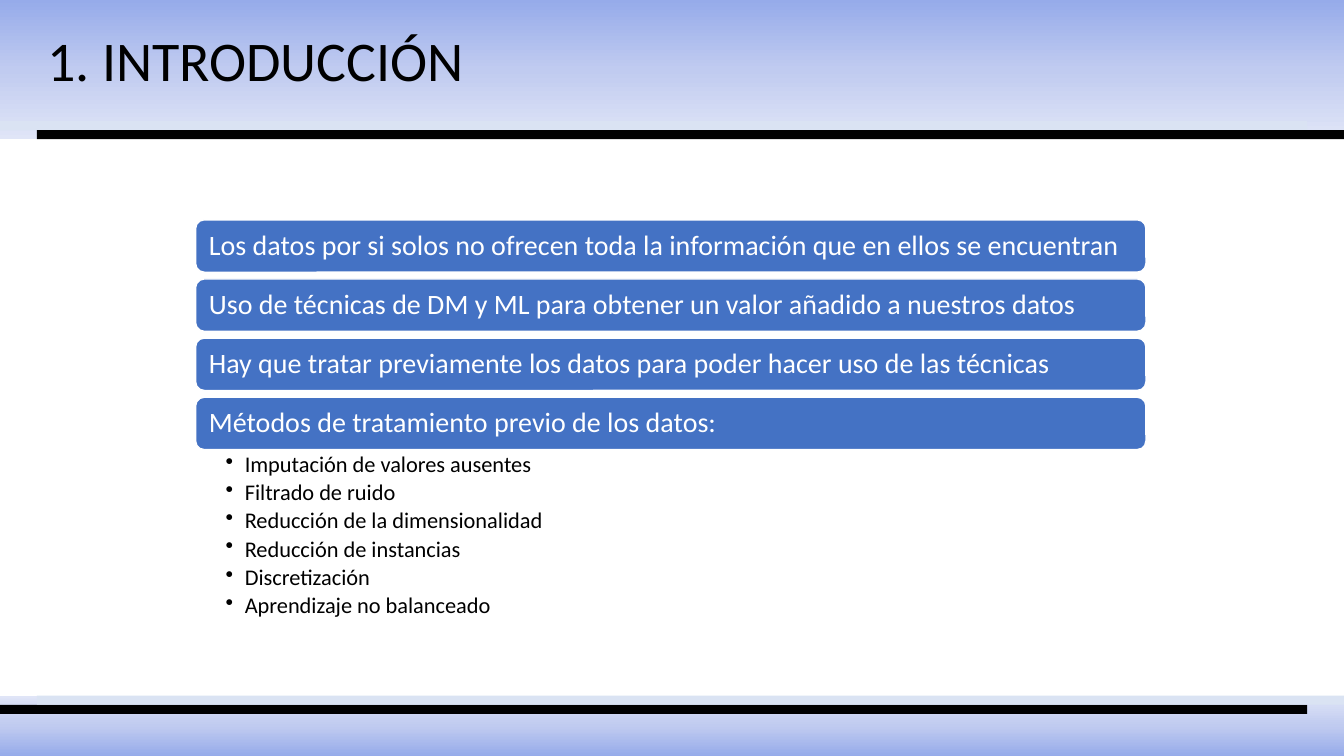
import copy

import pptx
import pptx.dml.color
import pptx.enum.shapes
import pptx.enum.text
import pptx.oxml.ns
import pptx.util
from lxml import etree

Cm = pptx.util.Cm
Pt = pptx.util.Pt
RGBColor = pptx.dml.color.RGBColor
SHAPES = pptx.enum.shapes.MSO_SHAPE
qn = pptx.oxml.ns.qn

BLACK = RGBColor(0x00, 0x00, 0x00)
WHITE = RGBColor(0xFF, 0xFF, 0xFF)
BLUE = RGBColor(0x44, 0x72, 0xC4)
PALE_BLUE = RGBColor(0xDA, 0xE3, 0xF3)
BAND_COLORS = [
    RGBColor(0x96, 0xAB, 0xEA),
    RGBColor(0xC0, 0xCB, 0xF0),
    RGBColor(0xE0, 0xE5, 0xF7),
]

FONT = "Calibri"
SLIDE_WIDTH, SLIDE_HEIGHT = Cm(33.87), Cm(19.05)
STRIPE_WIDTH, STRIPE_HEIGHT = Cm(32.94), Cm(0.23)
STRIPE_INDENT = SLIDE_WIDTH - STRIPE_WIDTH
LIST_LEFT, LIST_TOP, LIST_WIDTH = Cm(4.93), Cm(5.54), Cm(23.95)
BAR_HEIGHT, BAR_STEP = Cm(1.32), Cm(1.49)

IDEAS = [
    "Los datos por si solos no ofrecen toda la información que en ellos se encuentran",
    "Uso de técnicas de DM y ML para obtener un valor añadido a nuestros datos",
    "Hay que tratar previamente los datos para poder hacer uso de las técnicas",
    "Métodos de tratamiento previo de los datos:",
]
METHODS = [
    "Imputación de valores ausentes",
    "Filtrado de ruido",
    "Reducción de la dimensionalidad",
    "Reducción de instancias",
    "Discretización",
    "Aprendizaje no balanceado",
]


def add_span(para, text, size, color):
    span = para.add_run()
    span.text = text
    span.font.name = FONT
    span.font.size = Pt(size)
    span.font.color.rgb = color


def set_margins(frame, left, top, right, bottom):
    frame.margin_left, frame.margin_top = left, top
    frame.margin_right, frame.margin_bottom = right, bottom


def add_band(page, top, height, rotation):
    """Full-width band fading from deep to light blue."""
    band = page.shapes.add_shape(SHAPES.RECTANGLE, 0, top, SLIDE_WIDTH, height)
    band.shadow.inherit = False
    band.line.fill.background()
    band.rotation = rotation
    band.fill.gradient()
    band.fill.gradient_angle = 270
    # A third stop halfway between the two default ones
    first_stop = next(band._element.spPr.iter(qn("a:gs")))
    first_stop.addnext(copy.deepcopy(first_stop))
    for index, (stop, color) in enumerate(zip(band.fill.gradient_stops, BAND_COLORS)):
        stop.position = index / 2
        stop.color.rgb = color


def add_stripe(page, left, top, color):
    stripe = page.shapes.add_shape(
        SHAPES.RECTANGLE, left, top, STRIPE_WIDTH, STRIPE_HEIGHT)
    stripe.shadow.inherit = False
    stripe.fill.solid()
    stripe.fill.fore_color.rgb = color
    stripe.line.fill.background()


def add_title(page, text):
    box = page.shapes.add_textbox(Cm(0.94), Cm(0.53), Cm(11.58), Cm(1.96))
    box.text_frame.word_wrap = True
    box.text_frame.auto_size = pptx.enum.text.MSO_AUTO_SIZE.SHAPE_TO_FIT_TEXT
    add_span(box.text_frame.paragraphs[0], text, 40, BLACK)


def add_idea_bar(page, top, text):
    bar = page.shapes.add_shape(
        SHAPES.ROUNDED_RECTANGLE, LIST_LEFT, top, LIST_WIDTH, BAR_HEIGHT)
    bar.shadow.inherit = False
    bar.fill.solid()
    bar.fill.fore_color.rgb = BLUE
    bar.line.color.rgb = WHITE
    bar.line.width = Pt(1)
    frame = bar.text_frame
    frame.word_wrap = True
    frame.vertical_anchor = pptx.enum.text.MSO_ANCHOR.MIDDLE
    set_margins(frame, Cm(0.27), Cm(0.2), Cm(0.27), Cm(0.2))
    para = frame.paragraphs[0]
    para.alignment = pptx.enum.text.PP_ALIGN.LEFT
    para.line_spacing = 0.9
    add_span(para, text, 20, WHITE)


def add_bullets(page, top, items):
    box = page.shapes.add_textbox(LIST_LEFT, top, LIST_WIDTH, Cm(4.6))
    frame = box.text_frame
    frame.word_wrap = True
    set_margins(frame, Cm(0.76), Cm(0.07), Cm(0.4), Cm(0.07))
    for index, item in enumerate(items):
        para = frame.add_paragraph() if index else frame.paragraphs[0]
        para.level = 1
        para.line_spacing = 0.9
        para.space_after = Pt(2.9)
        add_span(para, item, 16, BLACK)
        # Hanging bullet
        properties = para._p.get_or_add_pPr()
        properties.set("marL", str(Cm(0.48)))
        properties.set("indent", str(-Cm(0.48)))
        etree.SubElement(properties, qn("a:buChar")).set("char", "•")


def main():
    deck = pptx.Presentation()
    deck.slide_width, deck.slide_height = SLIDE_WIDTH, SLIDE_HEIGHT
    page = deck.slides.add_slide(deck.slide_layouts[6])

    # Header and footer bands
    add_band(page, 0, Cm(3.51), 0)
    add_band(page, Cm(17.53), Cm(1.52), 180)

    # Paired stripes, offset to opposite sides
    add_stripe(page, 0, Cm(3.05), PALE_BLUE)
    add_stripe(page, STRIPE_INDENT, Cm(3.28), BLACK)
    add_stripe(page, 0, Cm(17.76), BLACK)
    add_stripe(page, STRIPE_INDENT, Cm(17.53), PALE_BLUE)

    add_title(page, "1. INTRODUCCIÓN")

    # Main ideas, with the methods listed under the last one
    for index, idea in enumerate(IDEAS):
        add_idea_bar(page, LIST_TOP + index * BAR_STEP, idea)
    add_bullets(page, Cm(11.35), METHODS)

    deck.save("out.pptx")


if __name__ == "__main__":
    main()
